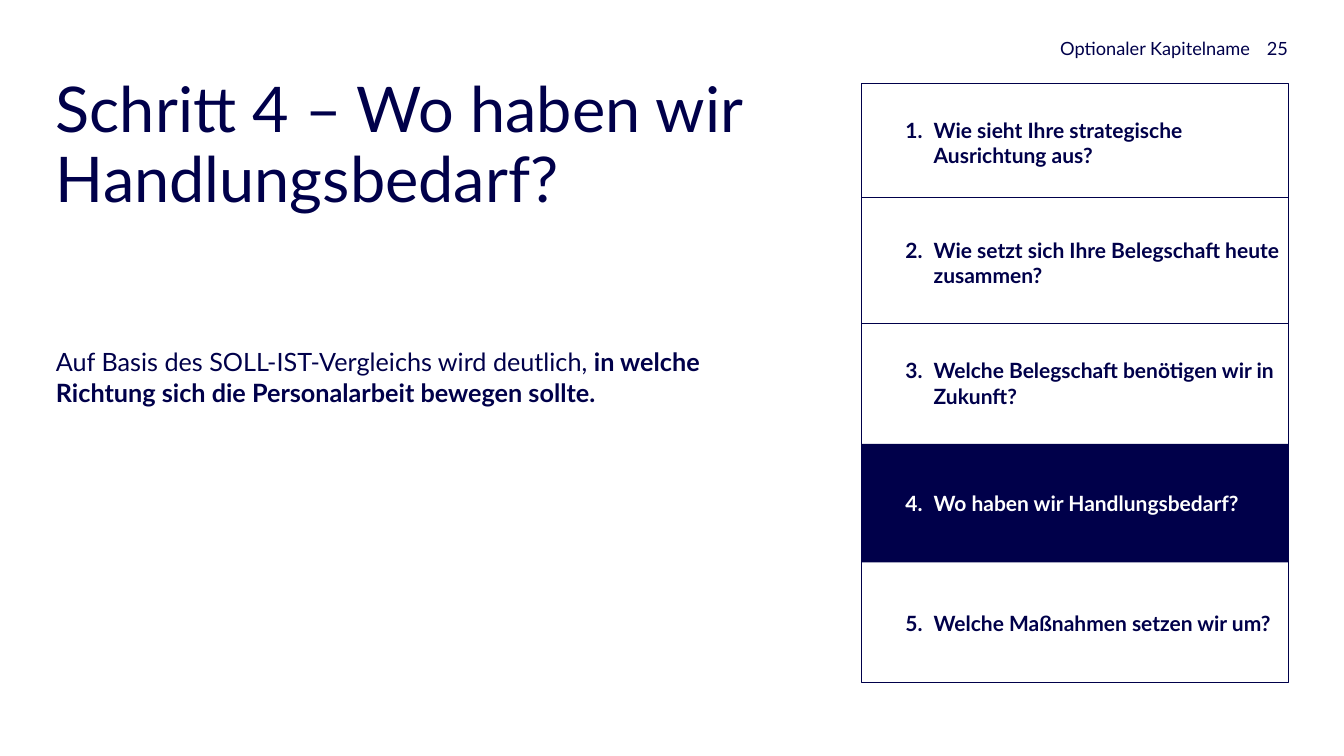
from lxml import etree
from pptx import Presentation
from pptx.dml.color import RGBColor
from pptx.enum.shapes import MSO_CONNECTOR, MSO_SHAPE
from pptx.enum.text import MSO_ANCHOR, PP_ALIGN
from pptx.oxml.ns import qn
from pptx.util import Inches, Pt

RECTANGLE = MSO_SHAPE.RECTANGLE
STRAIGHT = MSO_CONNECTOR.STRAIGHT
TOP, MIDDLE, BOTTOM = MSO_ANCHOR.TOP, MSO_ANCHOR.MIDDLE, MSO_ANCHOR.BOTTOM
LEFT, RIGHT = PP_ALIGN.LEFT, PP_ALIGN.RIGHT

COLORS = {"navy": "00004A", "white": "FFFFFF"}
FONT = "Lato"
STEPS = [
    "Wie sieht Ihre strategische Ausrichtung aus?",
    "Wie setzt sich Ihre Belegschaft heute zusammen?",
    "Welche Belegschaft benötigen wir in Zukunft?",
    "Wo haben wir Handlungsbedarf?",
    "Welche Maßnahmen setzen wir um?",
]
CURRENT_STEP = 4
STEP_HEIGHT = 2.35
DIVIDERS = [3.92, 6.41]


def rgb(name):
    return RGBColor.from_string(COLORS[name])


def add_box(slide, box, fill=None, line_width=None):
    shape = slide.shapes.add_shape(RECTANGLE, *map(Inches, box))
    shape.shadow.inherit = False
    if fill:
        shape.fill.solid()
        shape.fill.fore_color.rgb = rgb(fill)
    else:
        shape.fill.background()
    if line_width:
        shape.line.color.rgb = rgb("navy")
        shape.line.width = Pt(line_width)
    else:
        shape.line.fill.background()
    return shape


def write(shape, runs, size, color="navy", anchor=TOP, align=LEFT, insets=(0, 0, 0, 0)):
    frame = shape.text_frame
    frame.word_wrap = True
    frame.vertical_anchor = anchor
    frame.margin_left, frame.margin_top, frame.margin_right, frame.margin_bottom = map(Inches, insets)
    paragraph = frame.paragraphs[0]
    paragraph.alignment = align
    for text, bold in runs:
        run = paragraph.add_run()
        run.text = text
        run.font.name = FONT
        run.font.size = Pt(size)
        run.font.bold = bold
        run.font.color.rgb = rgb(color)
    return paragraph


def add_text(slide, box, runs, size, **style):
    return write(slide.shapes.add_textbox(*map(Inches, box)), runs, size, **style)


def number_paragraph(paragraph, number, color):
    properties = paragraph._p.get_or_add_pPr()
    properties.set("marL", str(Inches(0.56)))
    properties.set("indent", str(Inches(-0.56)))
    bullet_color = etree.SubElement(properties, qn("a:buClr"))
    etree.SubElement(bullet_color, qn("a:srgbClr"), val=COLORS[color])
    etree.SubElement(properties, qn("a:buFont"), typeface="+mj-lt")
    etree.SubElement(properties, qn("a:buAutoNum"), type="arabicPeriod", startAt=str(number))


def add_header(slide, left, top, width, height):
    page_width = 0.75
    chapter_width = width - page_width
    style = {"size": 26, "anchor": BOTTOM, "align": RIGHT}
    add_text(slide, (left, top, chapter_width, height), [("Optionaler Kapitelname", False)], **style)
    add_text(slide, (left + chapter_width, top, page_width, height), [("25", False)], **style)


def add_title(slide, *box):
    title = add_text(slide, box, [("Schritt 4 – Wo haben wir Handlungsbedarf?", False)], 90)
    title.line_spacing = 0.92


def add_body(slide, *box):
    add_text(slide, box, [
        ("Auf Basis des SOLL-IST-Vergleichs wird deutlich, ", False),
        ("in welche Richtung sich die Personalarbeit bewegen sollte.", True),
    ], 36)


def add_divider(slide, left, y, width):
    divider = slide.shapes.add_connector(STRAIGHT, *map(Inches, (left, y, left + width, y)))
    divider.line.color.rgb = rgb("navy")
    divider.line.width = Pt(0.5)
    etree.SubElement(divider._element.spPr, qn("a:effectLst"))


def add_steps(slide, left, top, width, height):
    add_box(slide, (left, top, width, height), line_width=0.75)
    pitch = (height - STEP_HEIGHT) / (len(STEPS) - 1)
    for number, question in enumerate(STEPS, 1):
        current = number == CURRENT_STEP
        color = "white" if current else "navy"
        step_box = (left, top + (number - 1) * pitch, width, STEP_HEIGHT)
        if current:
            step = add_box(slide, step_box, fill="navy")
        else:
            step = slide.shapes.add_textbox(*map(Inches, step_box))
        paragraph = write(step, [(question, True)], 30, color=color, anchor=MIDDLE,
                          insets=(0.87, 0.16, 0.16, 0.16))
        number_paragraph(paragraph, number, color)
    for y in DIVIDERS:
        add_divider(slide, left, y, width)


def main():
    presentation = Presentation()
    presentation.slide_width = Inches(26.66)
    presentation.slide_height = Inches(15)
    slide = presentation.slides.add_slide(presentation.slide_layouts[6])
    add_header(slide, 1.11, 0, 24.44, 1.18)
    add_title(slide, 1.11, 1.53, 15.12, 2.99)
    add_body(slide, 1.11, 6.88, 14.38, 6.66)
    add_steps(slide, 17.09, 1.66, 8.47, 11.88)
    presentation.save("out.pptx")


if __name__ == "__main__":
    main()
